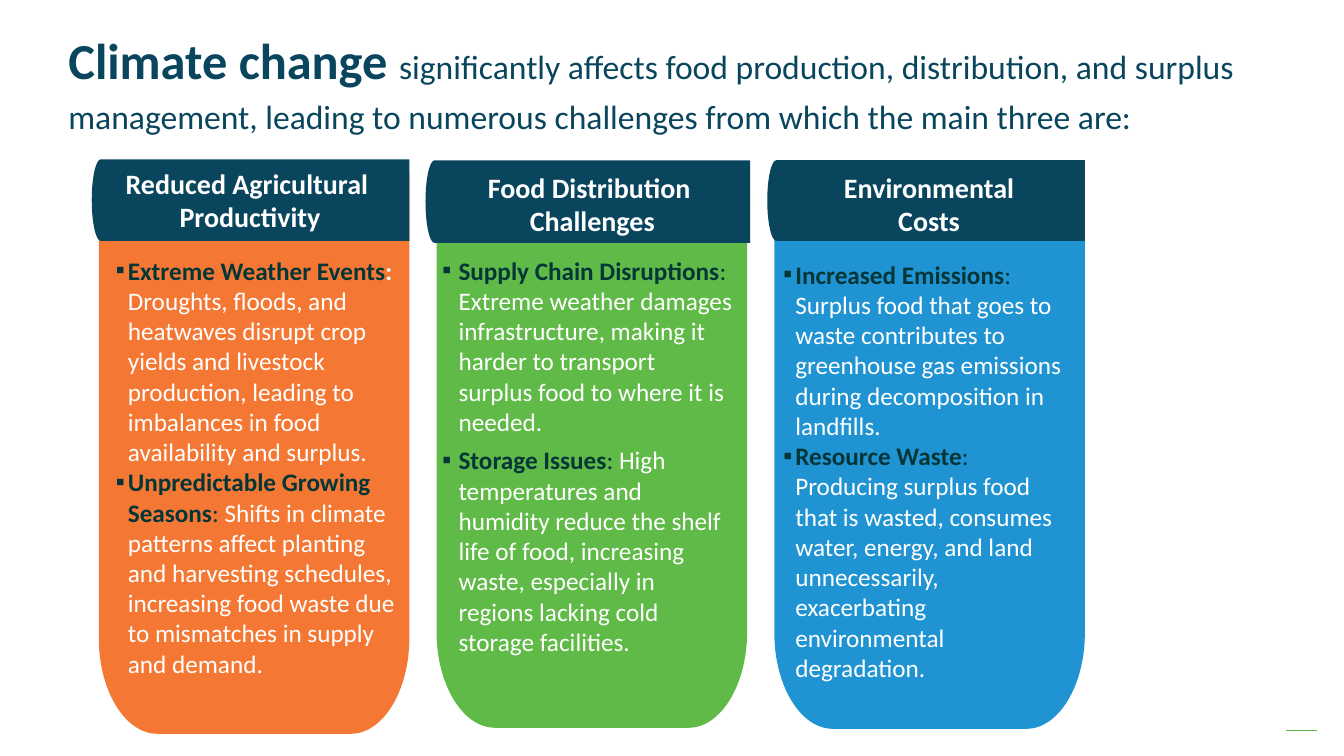
"""Build the slide on how climate change affects surplus food."""
from dataclasses import dataclass

from lxml import etree
from pptx import Presentation
from pptx.dml.color import RGBColor
from pptx.enum.shapes import MSO_CONNECTOR
from pptx.enum.text import MSO_AUTO_SIZE, PP_ALIGN
from pptx.oxml.ns import qn
from pptx.util import Inches, Pt

STRAIGHT = MSO_CONNECTOR.STRAIGHT
GROW = MSO_AUTO_SIZE.SHAPE_TO_FIT_TEXT
CENTER = PP_ALIGN.CENTER

COLORS = {
    "navy": "09465E", "dark": "043637", "white": "FFFFFF",
    "orange": "F47833", "green": "60BA47", "blue": "2094D2",
}
FORMATS = {
    "lead": {"size": Pt(36), "bold": True},
    "intro": {"size": Pt(24), "bold": False},
    "head": {"size": Pt(20), "bold": True},
    "strong": {"size": Pt(18), "bold": True},
    "plain": {"size": Pt(18), "bold": False},
}
ROUND = 0.55


@dataclass
class Box:
    left: float
    top: float
    width: float
    height: float


@dataclass
class Dot:
    x: float
    y: float
    bend: str = ""


@dataclass
class Run:
    text: str
    style: str
    color: str


@dataclass
class Column:
    color: str
    body: Box
    cap: Box
    head: Box
    title: list[str]
    notes: Box
    colon: Run
    points: list[tuple[str, str]]
    indent: float = 0.12
    after: int = 0


SOFT = Run(": ", "plain", "dark")
COLUMNS = [
    Column(
        "orange", Box(0.98, 1.71, 3.08, 5.57), Box(0.91, 1.58, 3.15, 0.81),
        Box(0.97, 1.6, 3.02, 0.77), ["Reduced Agricultural ", "Productivity"],
        Box(1.05, 2.48, 3.02, 4.34), Run(": ", "strong", "white"),
        [("Extreme Weather Events",
          "Droughts, floods, and heatwaves disrupt crop yields and livestock "
          "production, leading to imbalances in food availability and surplus."),
         ("Unpredictable Growing Seasons",
          "Shifts in climate patterns affect planting and harvesting schedules, "
          "increasing food waste due to mismatches in supply and demand.")]),
    Column(
        "blue", Box(7.68, 1.74, 3.08, 5.49), Box(7.61, 1.59, 3.15, 0.8),
        Box(8.03, 1.64, 2.37, 0.77), ["Environmental Costs"],
        Box(7.67, 2.52, 3.08, 4.34), SOFT,
        [("Increased Emissions",
          "Surplus food that goes to waste contributes to greenhouse gas "
          "emissions during decomposition in landfills."),
         ("Resource Waste",
          "Producing surplus food that is wasted, consumes water, energy, and "
          "land unnecessarily, exacerbating environmental degradation.")]),
    Column(
        "green", Box(4.33, 1.6, 3.08, 5.62), Box(4.22, 1.59, 3.22, 0.82),
        Box(4.47, 1.64, 2.81, 0.77), ["Food Distribution ", "Challenges"],
        Box(4.29, 2.48, 3.08, 4.12), SOFT,
        [("Supply Chain Disruptions",
          "Extreme weather damages infrastructure, making it harder to "
          "transport surplus food to where it is needed."),
         ("Storage Issues",
          "High temperatures and humidity reduce the shelf life of food, "
          "increasing waste, especially in regions lacking cold storage "
          "facilities.")],
        0.16, 6),
]


def paint(color: str) -> RGBColor:
    return RGBColor.from_string(COLORS[color])


def bend_side(side, last: tuple[int, int], spot: tuple[int, int], bend: str) -> None:
    (ax, ay), (bx, by) = last, spot
    near, far = ROUND, 1 - ROUND
    if bend == "flat":
        grips = [(ax + near * (bx - ax), ay), (bx, ay + far * (by - ay))]
    else:
        grips = [(ax, ay + near * (by - ay)), (ax + far * (bx - ax), by)]
    side.tag = qn("a:cubicBezTo")
    for slot, (x, y) in enumerate(grips):
        grip = etree.Element(qn("a:pt"), x=str(round(x)), y=str(round(y)))
        side.insert(slot, grip)


def add_form(slide, dots: list[Dot], color: str) -> None:
    spots = [(Inches(dot.x), Inches(dot.y)) for dot in dots]
    form = slide.shapes.build_freeform(*spots[0], scale=1.0)
    form.add_line_segments(spots[1:], close=True)
    shape = form.convert_to_shape()
    shape.shadow.inherit = False
    shape.fill.solid()
    shape.fill.fore_color.rgb = paint(color)
    shape.line.fill.background()
    trace = next(shape._element.iter(qn("a:path")))
    local = [(x - shape.left, y - shape.top) for x, y in spots]
    for old, last, spot, dot in zip(list(trace)[1:], local, local[1:], dots[1:]):
        if dot.bend:
            side = etree.Element(qn("a:cubicBezTo"))
            side.extend(list(old))
            trace.replace(old, side)
            bend_side(side, last, spot, dot.bend)


def add_body(slide, box: Box, color: str) -> None:
    right, base = box.left + box.width, box.top + box.height
    wide, high = 0.58, 0.95
    add_form(slide, [
        Dot(right - wide, base), Dot(box.left + wide, base),
        Dot(box.left, base - high, "flat"), Dot(box.left, box.top),
        Dot(right, box.top), Dot(right, base - high),
        Dot(right - wide, base, "steep"),
    ], color)


def add_cap(slide, box: Box) -> None:
    right, base = box.left + box.width, box.top + box.height
    edge = box.left + 0.09
    add_form(slide, [
        Dot(right, base), Dot(edge, base),
        Dot(box.left, box.top + box.height / 2, "flat"),
        Dot(edge, box.top, "steep"), Dot(right, box.top),
    ], "navy")


def add_text(slide, box: Box, lines: list[list[Run]]) -> list:
    place = [Inches(side) for side in (box.left, box.top, box.width, box.height)]
    frame = slide.shapes.add_textbox(*place).text_frame
    frame.word_wrap = True
    frame.auto_size = GROW
    for _ in lines[1:]:
        frame.add_paragraph()
    for para, runs in zip(frame.paragraphs, lines):
        for item in runs:
            run = para.add_run()
            run.text = item.text
            run.font.name = "Calibri"
            run.font.color.rgb = paint(item.color)
            for key, value in FORMATS[item.style].items():
                setattr(run.font, key, value)
    return list(frame.paragraphs)


def add_mark(para, indent: float) -> None:
    props = para._p.get_or_add_pPr()
    props.set("marL", str(Inches(indent)))
    props.set("indent", str(-Inches(indent)))
    etree.SubElement(props, qn("a:buFont"), typeface="Calibri")
    etree.SubElement(props, qn("a:buChar"), char="▪")
    tabs = etree.SubElement(props, qn("a:tabLst"))
    etree.SubElement(tabs, qn("a:tab"), pos=str(Inches(0.5)), algn="l")


def add_column(slide, col: Column) -> None:
    add_body(slide, col.body, col.color)
    add_cap(slide, col.cap)
    heads = [[Run(text, "head", "white")] for text in col.title]
    for para in add_text(slide, col.head, heads):
        para.alignment = CENTER
    lines = [
        [Run(name, "strong", "dark"), colon, Run(text, "plain", "white")]
        for (name, text), colon in zip(col.points, [col.colon, SOFT])
    ]
    for para in add_text(slide, col.notes, lines):
        add_mark(para, col.indent)
        para.space_after = Pt(col.after)


def add_intro(slide) -> None:
    para = add_text(slide, Box(0.08, 0.15, 13.17, 1.23), [[
        Run("Climate change ", "lead", "navy"),
        Run("significantly affects food production, distribution, and surplus "
            "management, leading to numerous challenges from which the main "
            "three are:", "intro", "navy"),
    ]])[0]
    para._p.get_or_add_pPr().set("marL", str(Inches(0.5)))
    para.line_spacing = 1.15
    para.space_after = Pt(8)


def add_dash(slide) -> None:
    ends = [Inches(side) for side in (12.75, 7.25, 13.06, 7.25)]
    dash = slide.shapes.add_connector(STRAIGHT, *ends)
    dash.line.color.rgb = paint("green")
    dash.line.width = Pt(1)
    etree.SubElement(dash._element.spPr, qn("a:effectLst"))


def main() -> None:
    deck = Presentation()
    deck.slide_width, deck.slide_height = Inches(13.33), Inches(7.5)
    slide = deck.slides.add_slide(deck.slide_layouts[6])
    add_dash(slide)
    add_intro(slide)
    for col in COLUMNS:
        add_column(slide, col)
    deck.save("out.pptx")


if __name__ == "__main__":
    main()
